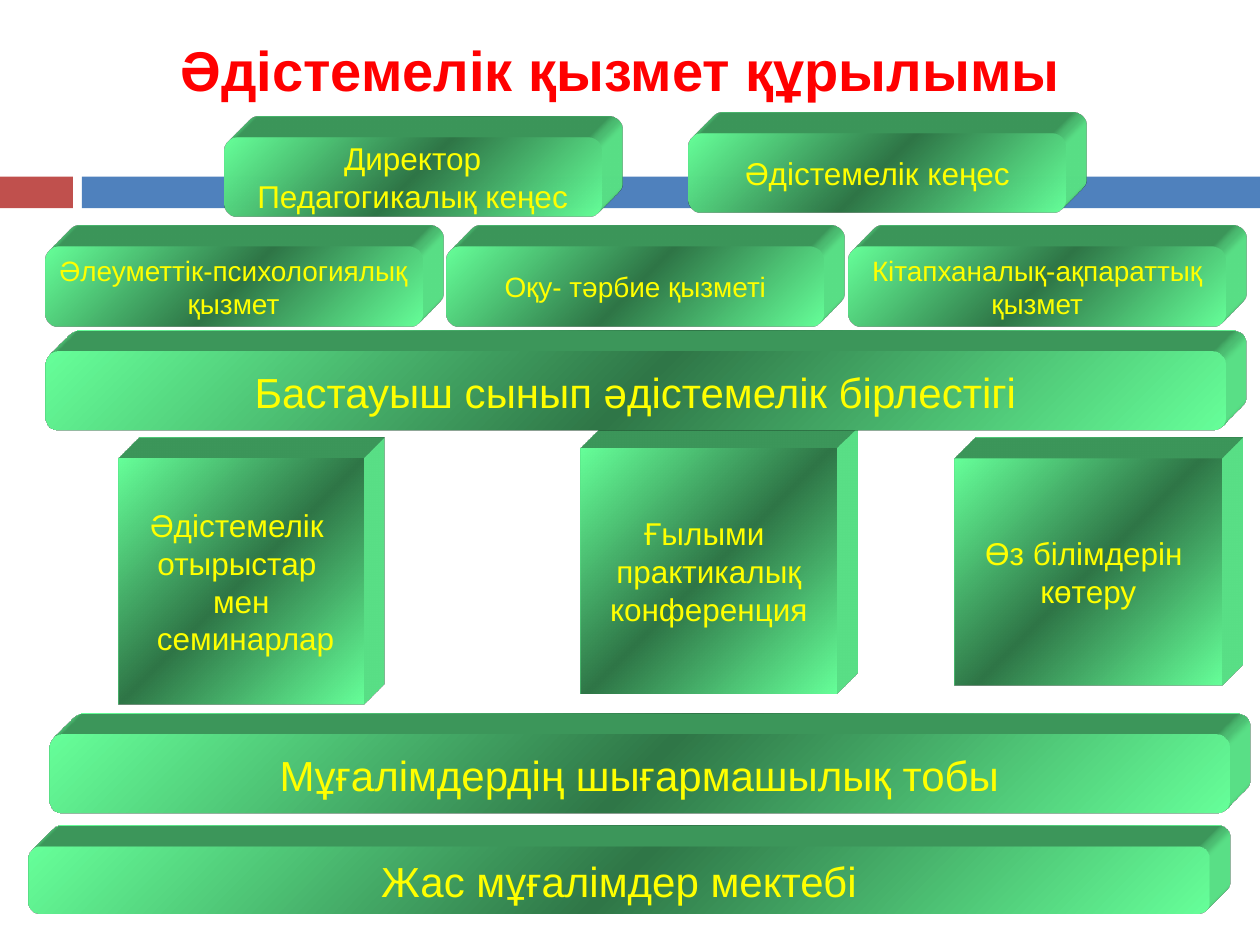
import dataclasses

import lxml.etree
import pptx
import pptx.dml.color
import pptx.enum.shapes
import pptx.enum.text
import pptx.util

Cm = pptx.util.Cm
SHAPES = pptx.enum.shapes.MSO_SHAPE
DRAWING = "http://schemas.openxmlformats.org/drawingml/2006/main"
LIGHT, DARK, YELLOW = "66FF99", "2F7647", "FFFF00"

GRADIENT = f"""<a:gradFill xmlns:a="{DRAWING}" rotWithShape="1"><a:gsLst>
<a:gs pos="0"><a:srgbClr val="{LIGHT}"/></a:gs>
<a:gs pos="50000"><a:srgbClr val="{DARK}"/></a:gs>
<a:gs pos="100000"><a:srgbClr val="{LIGHT}"/></a:gs>
</a:gsLst><a:lin ang="2700000" scaled="1"/></a:gradFill>"""
SCENE = f"""<a:scene3d xmlns:a="{DRAWING}"><a:camera prst="legacyObliqueTopRight"/>
<a:lightRig rig="legacyFlat3" dir="b"/></a:scene3d>"""
EXTRUSION = f"""<a:sp3d xmlns:a="{DRAWING}" extrusionH="430200" prstMaterial="legacyMatte">
<a:bevelT w="13500" h="13500" prst="angle"/><a:bevelB w="13500" h="13500" prst="angle"/>
<a:extrusionClr><a:srgbClr val="{LIGHT}"/></a:extrusionClr></a:sp3d>"""


@dataclasses.dataclass
class Block:
    """A raised block; lengths in centimetres, size in points."""
    lines: list[str]
    left: float
    top: float
    width: float = 7.6
    height: float = 1.6
    size: int = 18
    rounded: bool = True


def color(value: str) -> pptx.dml.color.RGBColor:
    return pptx.dml.color.RGBColor.from_string(value)


def add_plain(page, kind, left: float, top: float, width: float, height: float):
    shape = page.shapes.add_shape(kind, Cm(left), Cm(top), Cm(width), Cm(height))
    shape.shadow.inherit = False
    shape.line.fill.background()
    return shape


def add_stripe(page, left: float, width: float, fill: str) -> None:
    stripe = add_plain(page, SHAPES.RECTANGLE, left, 3.56, width, 0.64)
    stripe.fill.solid()
    stripe.fill.fore_color.rgb = color(fill)


def style(para, size: int, text_color: str) -> None:
    para.alignment = pptx.enum.text.PP_ALIGN.CENTER
    para.font.name = "Arial"
    para.font.size = pptx.util.Pt(size)
    para.font.color.rgb = color(text_color)


def add_block(page, block: Block) -> None:
    kind = SHAPES.ROUNDED_RECTANGLE if block.rounded else SHAPES.RECTANGLE
    shape = add_plain(page, kind, block.left, block.top, block.width, block.height)
    # Gradient goes right after the geometry, depth at the end
    properties = shape.element.spPr
    geometry = properties.find(f"{{{DRAWING}}}prstGeom")
    geometry.addnext(lxml.etree.fromstring(GRADIENT))
    for part in (SCENE, EXTRUSION):
        properties.append(lxml.etree.fromstring(part))
    frame = shape.text_frame
    frame.word_wrap = False
    frame.vertical_anchor = pptx.enum.text.MSO_ANCHOR.MIDDLE
    frame.text = "\n".join(block.lines)
    for para in frame.paragraphs:
        style(para, block.size, YELLOW)


def add_title(page, text: str) -> None:
    title = page.shapes.title
    title.left, title.top, title.width, title.height = Cm(3.38), Cm(0.58), Cm(18.26), Cm(1.63)
    title.text_frame.text = text
    title.text_frame.vertical_anchor = pptx.enum.text.MSO_ANCHOR.MIDDLE
    para = title.text_frame.paragraphs[0]
    style(para, 32, "FF0000")
    para.font.bold = True


SERVICES = [
    ["Әлеуметтік-психологиялық", "қызмет"],
    ["Оқу- тәрбие қызметі"],
    ["Кітапханалық-ақпараттық", "қызмет"],
]
BLOCKS = [
    # Forms of work, behind the wide bar
    Block(["Әдістемелік ", "отырыстар ", "мен", " семинарлар"],
          2.39, 9.25, 4.95, 4.95, rounded=False),
    Block(["Ғылыми ", "практикалық", "конференция"], 11.71, 9.04, 5.16, 4.95, rounded=False),
    Block(["Өз білімдерін ", "көтеру"], 19.25, 9.25, 5.38, 4.57, rounded=False),
    # Management
    Block(["Директор", "Педагогикалық кеңес"], 4.52, 2.77),
    Block(["Әдістемелік кеңес"], 13.89, 2.69),
    # Wide bars
    Block(["Мұғалімдердің шығармашылық тобы"], 0.99, 14.81, 23.8, size=24),
    Block(["Жас мұғалімдер мектебі"], 0.58, 17.07, 23.8, 1.35, size=24),
    Block(["Бастауыш сынып әдістемелік бірлестігі"], 0.91, 7.09, 23.8, size=24),
    # Row of services
    *(Block(lines, 0.91 + 8.1 * column, 4.98, size=16) for column, lines in enumerate(SERVICES)),
]


def main() -> None:
    deck = pptx.Presentation()
    deck.slide_width, deck.slide_height = Cm(25.4), Cm(19.05)
    page = deck.slides.add_slide(deck.slide_layouts[5])
    add_title(page, "Әдістемелік қызмет құрылымы")
    add_stripe(page, 0, 1.47, "C0504D")
    add_stripe(page, 1.65, 23.75, "4F81BD")
    for block in BLOCKS:
        add_block(page, block)
    deck.save("out.pptx")


if __name__ == "__main__":
    main()
